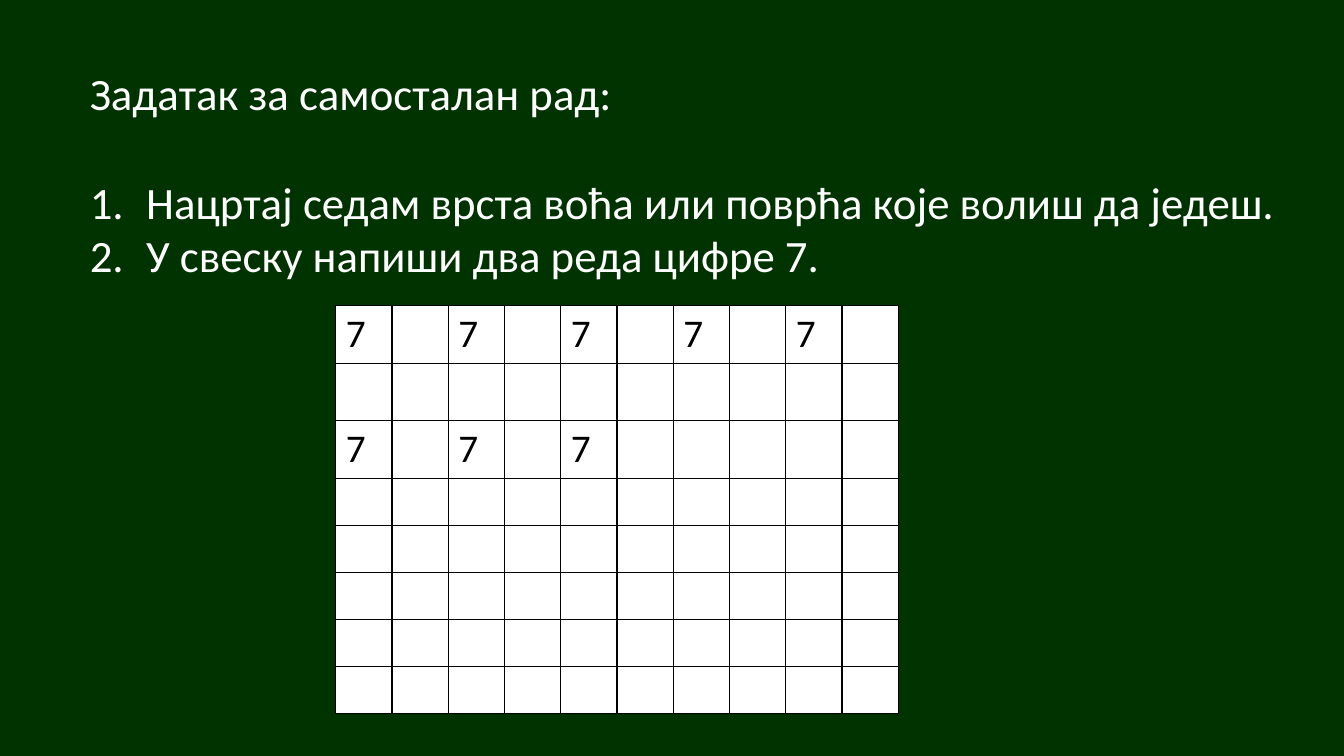
"""Build a slide with a homework task and a grid for writing the digit 7."""
from lxml.etree import SubElement
from pptx import Presentation
from pptx.dml.color import RGBColor
from pptx.enum.text import MSO_ANCHOR, MSO_AUTO_SIZE, PP_ALIGN
from pptx.oxml.ns import qn
from pptx.util import Inches, Pt


def color(hex_value):
    return RGBColor.from_string(hex_value)


def apply_format(target, values):
    for name, value in values.items():
        setattr(target, name, value)


WHITE, BLACK, GREEN = "FFFFFF", "000000", "003300"
TEXT_FONT = {"name": "Calibri", "size": Pt(32), "bold": False}
DIGIT_FONT = {"name": "Calibri", "size": Pt(28), "bold": False}
FRAME_FORMAT = {
    "word_wrap": True,
    "auto_size": MSO_AUTO_SIZE.NONE,
    "vertical_anchor": MSO_ANCHOR.TOP,
    "margin_left": Inches(0.1),
    "margin_right": Inches(0.1),
    "margin_top": Inches(0.05),
    "margin_bottom": Inches(0.05),
}
PARAGRAPH_FORMAT = {
    "alignment": PP_ALIGN.LEFT,
    "space_before": Pt(0),
    "space_after": Pt(0),
    "line_spacing": 1.0,
}

presentation = Presentation()
apply_format(presentation, {"slide_width": Inches(13.33), "slide_height": Inches(7.5)})
slide = presentation.slides.add_slide(presentation.slide_layouts[1])
slide.background.fill.solid()
slide.background.fill.fore_color.rgb = color(GREEN)

title = slide.shapes.title
tasks = slide.placeholders[1]
title.text_frame.text = "Задатак за самосталан рад:"
tasks.text_frame.text = (
    "Нацртај седам врста воћа или поврћа које волиш да једеш.\n"
    "У свеску напиши два реда цифре 7."
)

for shape, top, height in [(title, 0.6, 0.65), (tasks, 1.68, 1.18)]:
    apply_format(shape, {
        "left": Inches(0.79),
        "top": Inches(top),
        "width": Inches(12.07),
        "height": Inches(height),
    })
    apply_format(shape.text_frame, FRAME_FORMAT)
    for paragraph in shape.text_frame.paragraphs:
        apply_format(paragraph, PARAGRAPH_FORMAT)
        for run in paragraph.runs:
            apply_format(run.font, TEXT_FONT)
            run.font.color.rgb = color(WHITE)

for paragraph in tasks.text_frame.paragraphs:
    properties = paragraph._p.get_or_add_pPr()
    properties.set("marL", str(Inches(0.56)))
    properties.set("indent", str(Inches(-0.56)))
    SubElement(properties, qn("a:buFont"), typeface="+mj-lt")
    SubElement(properties, qn("a:buAutoNum"), type="arabicPeriod")

ROWS, COLUMNS = 8, 10
digit_cells = {(0, column) for column in range(0, 10, 2)}
digit_cells |= {(2, column) for column in range(0, 6, 2)}

table = slide.shapes.add_table(
    ROWS, COLUMNS, Inches(3.33), Inches(3.03), Inches(5.58), Inches(4.03)
).table
apply_format(table, {"first_row": False, "horz_banding": False})
for column in table.columns:
    column.width = Inches(0.558)
for row_index, row in enumerate(table.rows):
    row.height = Inches(0.565 if row_index < 3 else 0.467)
    for column_index, cell in enumerate(row.cells):
        cell_properties = cell._tc.get_or_add_tcPr()
        for side in ("lnL", "lnR", "lnT", "lnB"):
            border = SubElement(cell_properties, qn(f"a:{side}"), w=str(Pt(1)))
            border_fill = SubElement(border, qn("a:solidFill"))
            SubElement(border_fill, qn("a:srgbClr"), val=BLACK)
        cell.fill.solid()
        cell.fill.fore_color.rgb = color(WHITE)
        if (row_index, column_index) in digit_cells:
            cell.text = "7"
            font = cell.text_frame.paragraphs[0].runs[0].font
            apply_format(font, DIGIT_FONT)
            font.color.rgb = color(BLACK)

presentation.save("out.pptx")
